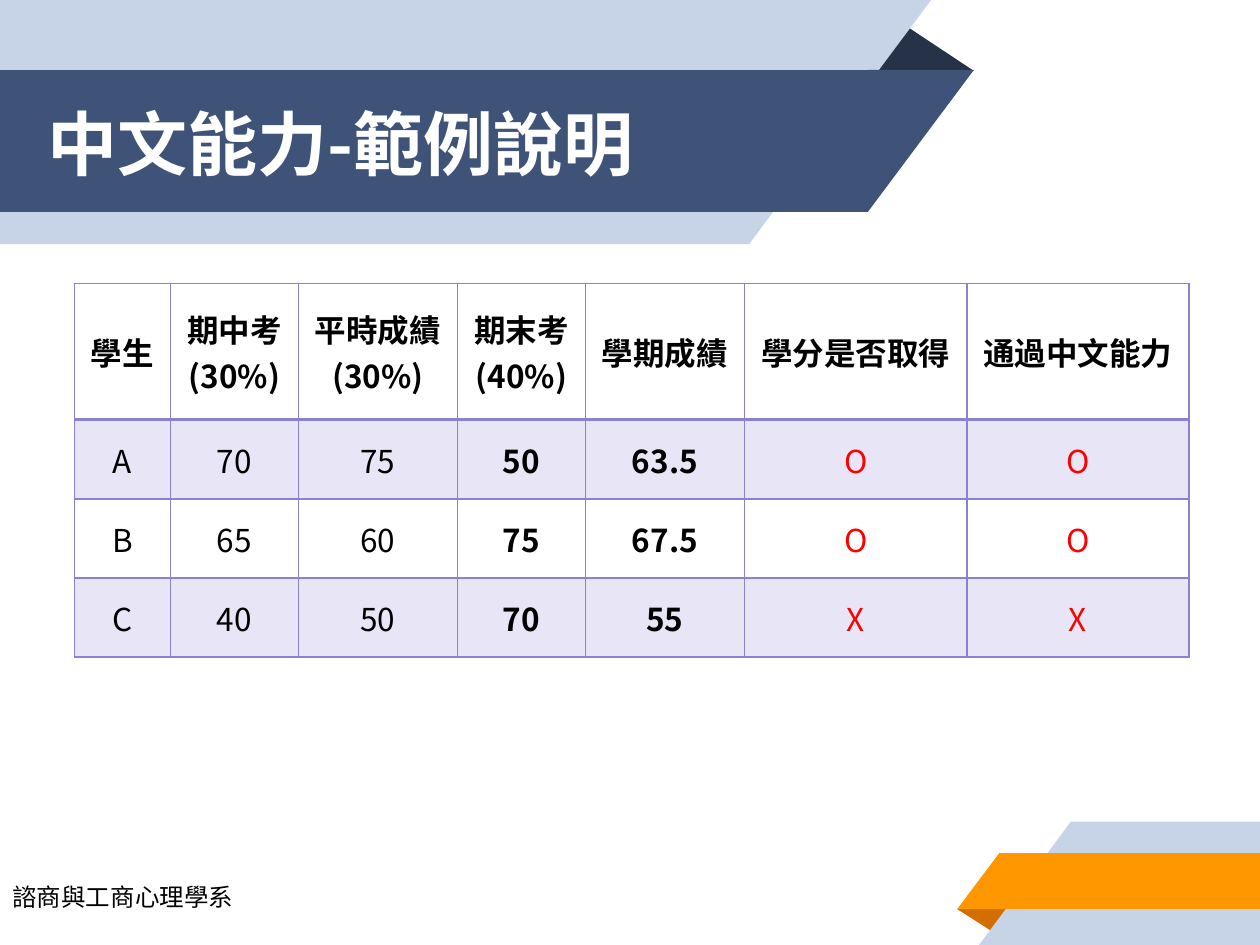
from dataclasses import dataclass

from lxml import etree
from pptx import Presentation
from pptx.dml.color import RGBColor
from pptx.enum.shapes import MSO_SHAPE
from pptx.enum.text import MSO_ANCHOR, PP_ALIGN
from pptx.oxml.ns import qn
from pptx.util import Pt

RECT = MSO_SHAPE.RECTANGLE
RIGHT_TRIANGLE = MSO_SHAPE.RIGHT_TRIANGLE
TRIANGLE = MSO_SHAPE.ISOSCELES_TRIANGLE
CENTER, LEFT = PP_ALIGN.CENTER, PP_ALIGN.LEFT
MIDDLE, TOP = MSO_ANCHOR.MIDDLE, MSO_ANCHOR.TOP

COLORS = {
    "pale": "C7D3E6", "navy": "3F5378", "navy_fold": "263248",
    "orange": "FF9800", "orange_fold": "D26F00", "lilac": "8B81D2",
    "white": "FFFFFF", "black": "000000", "red": "FF0000",
}
CJK_FONT = "Noto Sans CJK SC"
LATIN_FONT = "Arial"


@dataclass
class Ribbon:
    kind: MSO_SHAPE
    left: float
    top: float
    width: float
    height: float
    color: str
    rotation: int = 0
    flipped: bool = True


RIBBONS = [
    Ribbon(TRIANGLE, 495.5, 13, 61, 27.5, "navy_fold", flipped=False),
    Ribbon(RECT, 0, 0, 428, 139.5, "pale", 180),
    Ribbon(RIGHT_TRIANGLE, 428, 0, 104, 139.5, "pale", 180),
    Ribbon(RECT, 0, 40, 496, 81, "navy", 180),
    Ribbon(RIGHT_TRIANGLE, 496, 40, 60.5, 81, "navy", 180),
    Ribbon(TRIANGLE, 547, 519.5, 31, 13.5, "orange_fold", 180, False),
    Ribbon(RECT, 612, 469.5, 108, 70.5, "pale"),
    Ribbon(RIGHT_TRIANGLE, 559.5, 469.5, 52.5, 70.5, "pale"),
    Ribbon(RECT, 571, 487.5, 149, 32, "orange"),
    Ribbon(RIGHT_TRIANGLE, 547, 487.5, 24, 32, "orange"),
]

COLUMN_WIDTHS = [55, 73, 91, 73, 91, 127, 127]
ROW_HEIGHTS = [78, 45.2, 45.2, 45.2]
ROWS = [
    ["學生", "期中考\n(30%)", "平時成績\n(30%)", "期末考\n(40%)",
     "學期成績", "學分是否取得", "通過中文能力"],
    ["A", "70", "75", "50", "63.5", "O", "O"],
    ["B", "65", "60", "75", "67.5", "O", "O"],
    ["C", "40", "50", "70", "55", "X", "X"],
]
BOLD_COLUMNS = (3, 4)
RESULT_COLUMNS = (5, 6)


def rgb(name: str) -> RGBColor:
    return RGBColor.from_string(COLORS[name])


def format_text(tf, font: str, size: float, color: str, bold: bool = False,
                align=LEFT) -> None:
    for p in tf.paragraphs:
        p.alignment = align
        for r in p.runs:
            r.font.name = font
            r.font.size = Pt(size)
            r.font.bold = bold
            r.font.color.rgb = rgb(color)
            ea = etree.SubElement(r.font._element, qn("a:ea"))
            ea.set("typeface", font)


def draw_ribbon(s, ribbon: Ribbon) -> None:
    sp = s.shapes.add_shape(ribbon.kind, Pt(ribbon.left), Pt(ribbon.top),
                            Pt(ribbon.width), Pt(ribbon.height))
    sp.shadow.inherit = False
    sp.fill.solid()
    sp.fill.fore_color.rgb = rgb(ribbon.color)
    sp.line.fill.background()
    sp.rotation = ribbon.rotation
    if ribbon.kind == TRIANGLE:
        sp.adjustments[0] = 0.32
    if ribbon.flipped:
        sp.element.spPr.find(qn("a:xfrm")).set("flipH", "1")


def draw_title(s, text: str) -> None:
    title = s.shapes.title
    title.element.getparent().append(title.element)
    title.left, title.top, title.width, title.height = Pt(20), Pt(41), Pt(477), Pt(81)
    tf = title.text_frame
    tf.text = text
    tf.vertical_anchor = MIDDLE
    tf.margin_left = tf.margin_right = tf.margin_top = tf.margin_bottom = Pt(7.2)
    format_text(tf, CJK_FONT, 40, "white", bold=True)


def draw_footer(s, text: str) -> None:
    tf = s.shapes.add_textbox(Pt(0), Pt(500.5), Pt(228), Pt(29)).text_frame
    tf.word_wrap = True
    tf.vertical_anchor = TOP
    tf.text = text
    format_text(tf, LATIN_FONT, 14, "black")


def set_borders(cell, top: float, bottom: float) -> None:
    tc_pr = cell._tc.get_or_add_tcPr()
    for side, width in (("L", 1), ("R", 1), ("T", top), ("B", bottom)):
        ln = etree.SubElement(tc_pr, qn(f"a:ln{side}"), w=str(Pt(width)))
        fill = etree.SubElement(ln, qn("a:solidFill"))
        etree.SubElement(fill, qn("a:srgbClr"), val=COLORS["lilac"])


def fill_cell(cell, shaded: bool) -> None:
    if not shaded:
        cell.fill.background()
        return
    cell.fill.solid()
    cell.fill.fore_color.rgb = rgb("lilac")
    color = cell._tc.tcPr.find(qn("a:solidFill")).find(qn("a:srgbClr"))
    etree.SubElement(color, qn("a:alpha"), val="20000")


def draw_scores(s) -> None:
    table = s.shapes.add_table(len(ROWS), len(COLUMN_WIDTHS), Pt(42.5), Pt(162),
                               Pt(sum(COLUMN_WIDTHS)), Pt(sum(ROW_HEIGHTS))).table
    table.first_row = table.horz_banding = False
    for column, width in zip(table.columns, COLUMN_WIDTHS):
        column.width = Pt(width)
    for i, (values, height) in enumerate(zip(ROWS, ROW_HEIGHTS)):
        table.rows[i].height = Pt(height)
        header = i == 0
        for j, value in enumerate(values):
            cell = table.cell(i, j)
            cell.text_frame.text = value
            cell.vertical_anchor = MIDDLE
            set_borders(cell, top=2 if i == 1 else 1, bottom=2 if header else 1)
            fill_cell(cell, shaded=i % 2 == 1)
            color = "red" if j in RESULT_COLUMNS and not header else "black"
            format_text(cell.text_frame, CJK_FONT, 18, color,
                        bold=header or j in BOLD_COLUMNS, align=CENTER)


def main() -> None:
    prs = Presentation()
    prs.slide_width, prs.slide_height = Pt(720), Pt(540)
    s = prs.slides.add_slide(prs.slide_layouts[5])
    for ribbon in RIBBONS:
        draw_ribbon(s, ribbon)
    draw_title(s, "中文能力-範例說明")
    draw_footer(s, "諮商與工商心理學系")
    draw_scores(s)
    prs.save("out.pptx")


if __name__ == "__main__":
    main()
